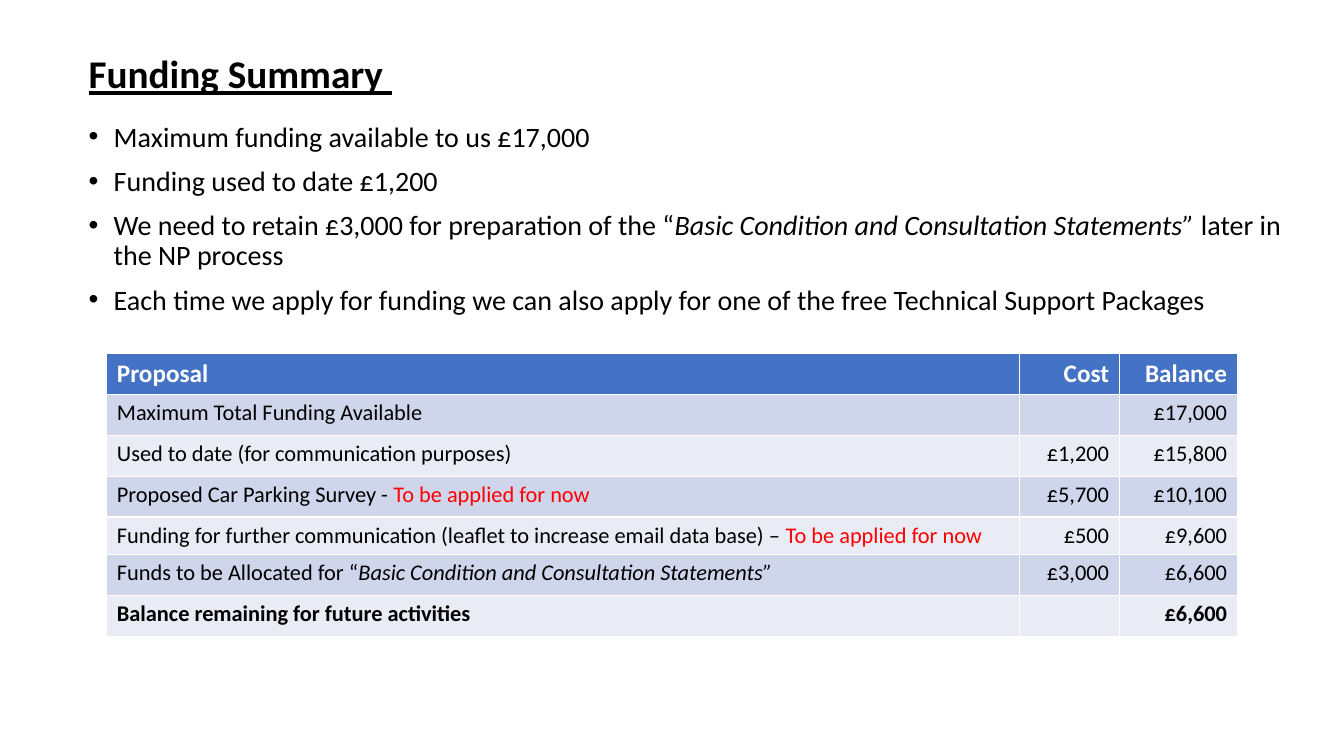
from dataclasses import dataclass

from lxml import etree
from pptx import Presentation
from pptx.dml.color import RGBColor
from pptx.enum.text import MSO_ANCHOR, MSO_AUTO_SIZE, PP_ALIGN
from pptx.oxml.ns import qn
from pptx.slide import Slide
from pptx.table import _Cell
from pptx.text.text import Font, _Paragraph
from pptx.util import Emu, Inches, Pt

LEFT, RIGHT = PP_ALIGN.LEFT, PP_ALIGN.RIGHT
MIDDLE = MSO_ANCHOR.MIDDLE
NO_FIT = MSO_AUTO_SIZE.NONE
WIDTH, HEIGHT = Inches(13.33), Inches(7.5)
TITLE_ONLY = 5


@dataclass(frozen=True)
class Theme:
    face: str = "Calibri"
    ink: str = "000000"
    alert: str = "FF0000"
    white: str = "FFFFFF"
    head: str = "4472C4"
    bands: tuple[str, str] = ("CFD5EA", "E9EBF5")
    title: int = 28
    body: int = 20
    label: int = 18
    cell: int = 16


THEME = Theme()


@dataclass(frozen=True)
class Span:
    text: str
    italic: bool = False
    color: str = ""


@dataclass(frozen=True)
class Row:
    name: list[Span]
    cost: str
    balance: str
    height: float = 5.4
    bold: bool = False


NOW = Span("To be applied for now", color=THEME.alert)
HEAD = Row([Span("Proposal")], "Cost", "Balance", bold=True)
ROWS = [
    Row([Span("Maximum Total Funding Available")], "", "£17,000"),
    Row([Span("Used to date (for communication purposes)")], "£1,200", "£15,800"),
    Row([Span("Proposed Car Parking Survey - "), NOW], "£5,700", "£10,100"),
    Row([Span("Funding for further communication (leaflet to increase "
              "email data base) – "), NOW], "£500", "£9,600", height=4.97),
    Row([Span("Funds to be Allocated for “"),
         Span("Basic Condition and Consultation Statements”", italic=True)],
        "£3,000", "£6,600"),
    Row([Span("Balance remaining for future activities")], "", "£6,600", bold=True),
]
POINTS = [
    [Span("Maximum funding available to us £17,000")],
    [Span("Funding used to date £1,200")],
    [Span("We need to retain £3,000 for preparation of the “"),
     Span("Basic Condition and Consultation Statements” ", italic=True),
     Span("later in the NP process")],
    [Span("Each time we apply for funding we can also apply for one of "
          "the free Technical Support Packages")],
]
COLUMNS = (67.89, 7.43, 8.78)


def across(share: float) -> Emu:
    """Turn a percentage of the slide's width into a length."""
    return Emu(round(WIDTH * share / 100))


def down(share: float) -> Emu:
    """Turn a percentage of the slide's height into a length."""
    return Emu(round(HEIGHT * share / 100))


def style(font: Font, size: int, color: str, bold: bool = False) -> None:
    font.name, font.size, font.bold = THEME.face, Pt(size), bold
    font.color.rgb = RGBColor.from_string(color)


def write(para: _Paragraph, spans: list[Span]) -> None:
    for span in spans:
        run = para.add_run()
        run.text = span.text
        if span.italic:
            run.font.italic = True
        if span.color:
            run.font.color.rgb = RGBColor.from_string(span.color)


def add_bullet(para: _Paragraph) -> None:
    props = para._p.get_or_add_pPr()
    indent = Inches(0.25)
    props.set("marL", str(indent))
    props.set("indent", str(-indent))
    etree.SubElement(props, qn("a:buFont")).set("typeface", "Arial")
    etree.SubElement(props, qn("a:buChar")).set("char", "•")


def add_title(slide: Slide) -> None:
    title = slide.shapes.title
    title.left, title.top = across(5.85), down(6)
    title.width, title.height = across(86.27), down(8.13)
    frame = title.text_frame
    frame.auto_size, frame.vertical_anchor = NO_FIT, MIDDLE
    para = frame.paragraphs[0]
    para.alignment, para.line_spacing = LEFT, 0.9
    write(para, [Span("Funding Summary ")])
    style(para.font, THEME.title, THEME.ink, bold=True)
    para.font.underline = True


def add_points(slide: Slide) -> None:
    box = slide.shapes.add_textbox(across(5.85), down(15.6), across(91.67), down(32.13))
    frame = box.text_frame
    frame.word_wrap = True
    for i, spans in enumerate(POINTS):
        para = frame.add_paragraph() if i else frame.paragraphs[0]
        add_bullet(para)
        para.line_spacing = 0.9
        if i:
            para.space_before = Pt(10)
        write(para, spans)
        style(para.font, THEME.body, THEME.ink)


def fill_cell(cell: _Cell, spans: list[Span], align: PP_ALIGN, fill: str,
              size: int, color: str, bold: bool) -> None:
    cell.fill.solid()
    cell.fill.fore_color.rgb = RGBColor.from_string(fill)
    para = cell.text_frame.paragraphs[0]
    para.alignment = align
    write(para, spans)
    style(para.font, size, color, bold)


def add_funds(slide: Slide) -> None:
    rows = [HEAD, *ROWS]
    table = slide.shapes.add_table(
        len(rows), len(COLUMNS), across(7.95), down(46.8),
        across(sum(COLUMNS)), down(sum(row.height for row in rows))).table
    for column, share in zip(table.columns, COLUMNS):
        column.width = across(share)
    for r, row in enumerate(rows):
        table.rows[r].height = down(row.height)
        if r:
            look = THEME.bands[(r - 1) % 2], THEME.cell, THEME.ink
        else:
            look = THEME.head, THEME.label, THEME.white
        texts = (row.name, [Span(row.cost)] if row.cost else [], [Span(row.balance)])
        for c, spans in enumerate(texts):
            fill_cell(table.cell(r, c), spans, RIGHT if c else LEFT, *look, row.bold)


def main() -> None:
    deck = Presentation()
    deck.slide_width, deck.slide_height = WIDTH, HEIGHT
    slide = deck.slides.add_slide(deck.slide_layouts[TITLE_ONLY])
    add_title(slide)
    add_points(slide)
    add_funds(slide)
    deck.save("out.pptx")


if __name__ == "__main__":
    main()
